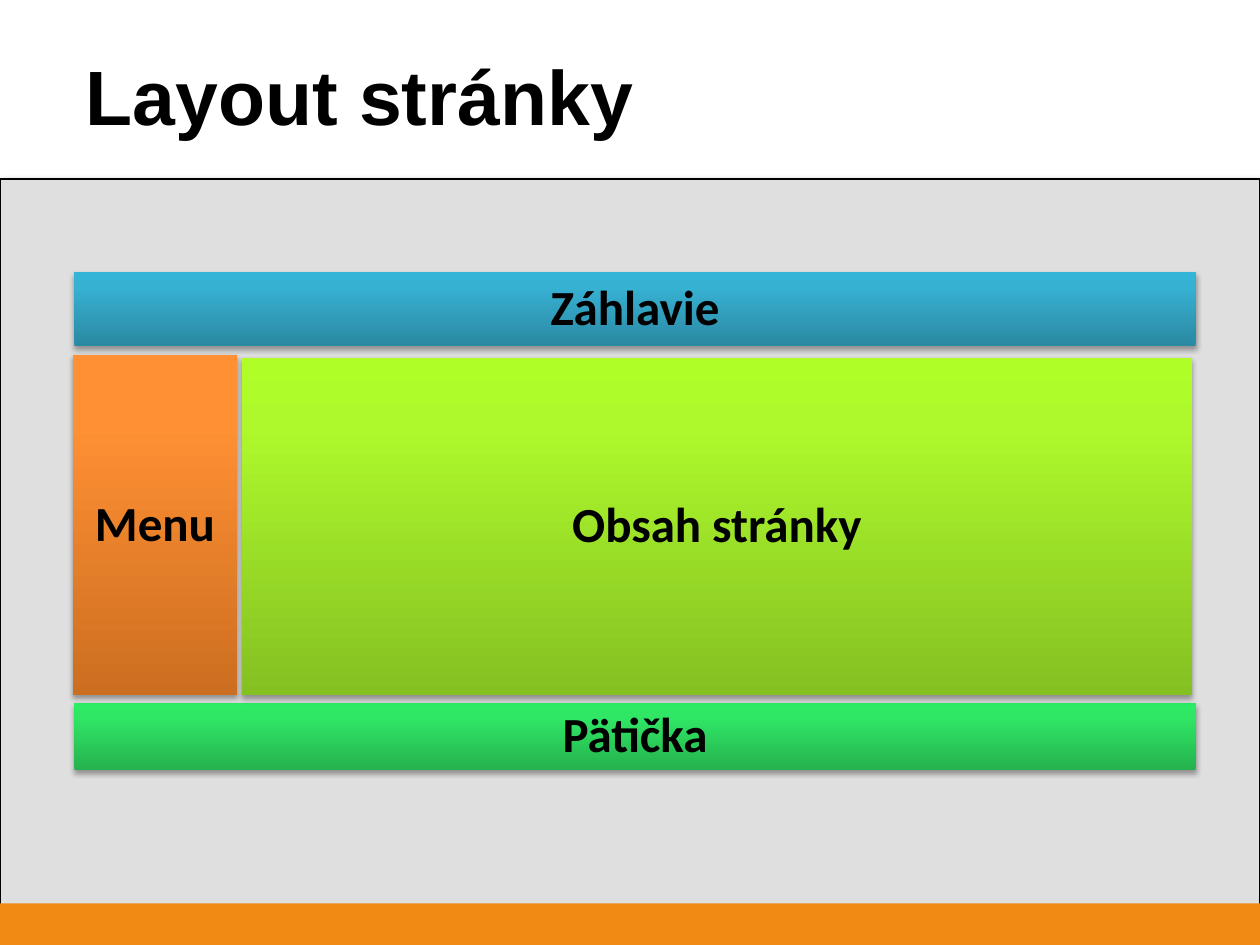
"""Build a slide that shows the layout of a web page as coloured blocks."""
import copy

import lxml.etree
import pptx
import pptx.dml.color
import pptx.enum.shapes
import pptx.enum.text
import pptx.oxml.ns
import pptx.util
from pptx.util import Inches

RGBColor = pptx.dml.color.RGBColor
BLACK = RGBColor(0x00, 0x00, 0x00)
PANEL_GREY = RGBColor(0xDF, 0xDF, 0xDF)
STRIP_ORANGE = RGBColor(0xF0, 0x8A, 0x15)
BLUES = [RGBColor(0x2A, 0x88, 0xA2), RGBColor(0x37, 0xB1, 0xD2), RGBColor(0x34, 0xB4, 0xD6)]
GREENS = [RGBColor(0x25, 0xB2, 0x4E), RGBColor(0x30, 0xE7, 0x65), RGBColor(0x2D, 0xEB, 0x64)]
LIMES = [RGBColor(0x85, 0xC0, 0x22), RGBColor(0xAD, 0xF9, 0x2C), RGBColor(0xAF, 0xFE, 0x28)]
ORANGES = [RGBColor(0xCC, 0x6E, 0x20), RGBColor(0xFF, 0x90, 0x34), RGBColor(0xFF, 0x91, 0x36)]
STOP_POSITIONS = [0, 0.8, 1]


def add_rectangle(slide, left, top, width, height):
    shape = slide.shapes.add_shape(
        pptx.enum.shapes.MSO_SHAPE.RECTANGLE,
        Inches(left), Inches(top), Inches(width), Inches(height))
    shape.shadow.inherit = False
    shape.line.fill.background()
    return shape


def add_shadow(shape, opacity, blur, distance, angle):
    qn = pptx.oxml.ns.qn
    effects = shape.element.spPr.find(qn("a:effectLst"))
    shadow = lxml.etree.SubElement(
        effects, qn("a:outerShdw"), blurRad=str(pptx.util.Pt(blur)),
        dist=str(pptx.util.Pt(distance)), dir=str(angle * 60000), rotWithShape="0")
    color = lxml.etree.SubElement(shadow, qn("a:srgbClr"), val=str(BLACK))
    lxml.etree.SubElement(color, qn("a:alpha"), val=str(opacity * 1000))


presentation = pptx.Presentation()
presentation.slide_width = Inches(10)
presentation.slide_height = Inches(7.5)
slide = presentation.slides.add_slide(presentation.slide_layouts[5])

panel = add_rectangle(slide, 0, 1.42, 10, 6.08)
panel.fill.solid()
panel.fill.fore_color.rgb = PANEL_GREY
panel.line.color.rgb = BLACK
panel.line.width = pptx.util.Pt(0.75)
add_shadow(panel, 40, 4, 3, 45)

strip = add_rectangle(slide, 0, 7.17, 10, 0.33)
strip.fill.solid()
strip.fill.fore_color.rgb = STRIP_ORANGE

title = slide.shapes.title
title.left, title.top = Inches(0.58), Inches(0.42)
title.width, title.height = Inches(9.42), Inches(0.77)
title.text_frame.vertical_anchor = pptx.enum.text.MSO_ANCHOR.TOP
title.text_frame.auto_size = pptx.enum.text.MSO_AUTO_SIZE.SHAPE_TO_FIT_TEXT
paragraph = title.text_frame.paragraphs[0]
paragraph.alignment = pptx.enum.text.PP_ALIGN.LEFT
paragraph.line_spacing = 0.9
run = paragraph.add_run()
run.text = "Layout stránky"
run.font.name = "Arial"
run.font.size = pptx.util.Pt(44)
run.font.bold = True
run.font.color.rgb = BLACK

blocks = [
    ("Záhlavie", 0.59, 2.16, 8.9, 0.59, BLUES),
    ("Pätička", 0.59, 5.58, 8.9, 0.53, GREENS),
    ("Obsah stránky", 1.92, 2.84, 7.54, 2.68, LIMES),
    ("Menu", 0.58, 2.82, 1.3, 2.7, ORANGES),
]
for label, left, top, width, height, colors in blocks:
    block = add_rectangle(slide, left, top, width, height)
    add_shadow(block, 35, 3.1, 1.8, 90)
    block.fill.gradient()
    block.fill.gradient_angle = 90
    stop_list = block.element.spPr.find(".//" + pptx.oxml.ns.qn("a:gsLst"))
    stop_list.append(copy.deepcopy(stop_list[-1]))
    for stop, position, color in zip(block.fill.gradient_stops, STOP_POSITIONS, colors):
        stop.position = position
        stop.color.rgb = color

    frame = block.text_frame
    frame.word_wrap = True
    frame.vertical_anchor = pptx.enum.text.MSO_ANCHOR.MIDDLE
    frame.margin_left = frame.margin_right = Inches(0.12)
    frame.margin_top = frame.margin_bottom = Inches(0.12)
    paragraph = frame.paragraphs[0]
    paragraph.alignment = pptx.enum.text.PP_ALIGN.CENTER
    paragraph.line_spacing = 0.9
    run = paragraph.add_run()
    run.text = label
    run.font.name = "Calibri"
    run.font.size = pptx.util.Pt(28)
    run.font.bold = True
    run.font.color.rgb = BLACK

presentation.save("out.pptx")
